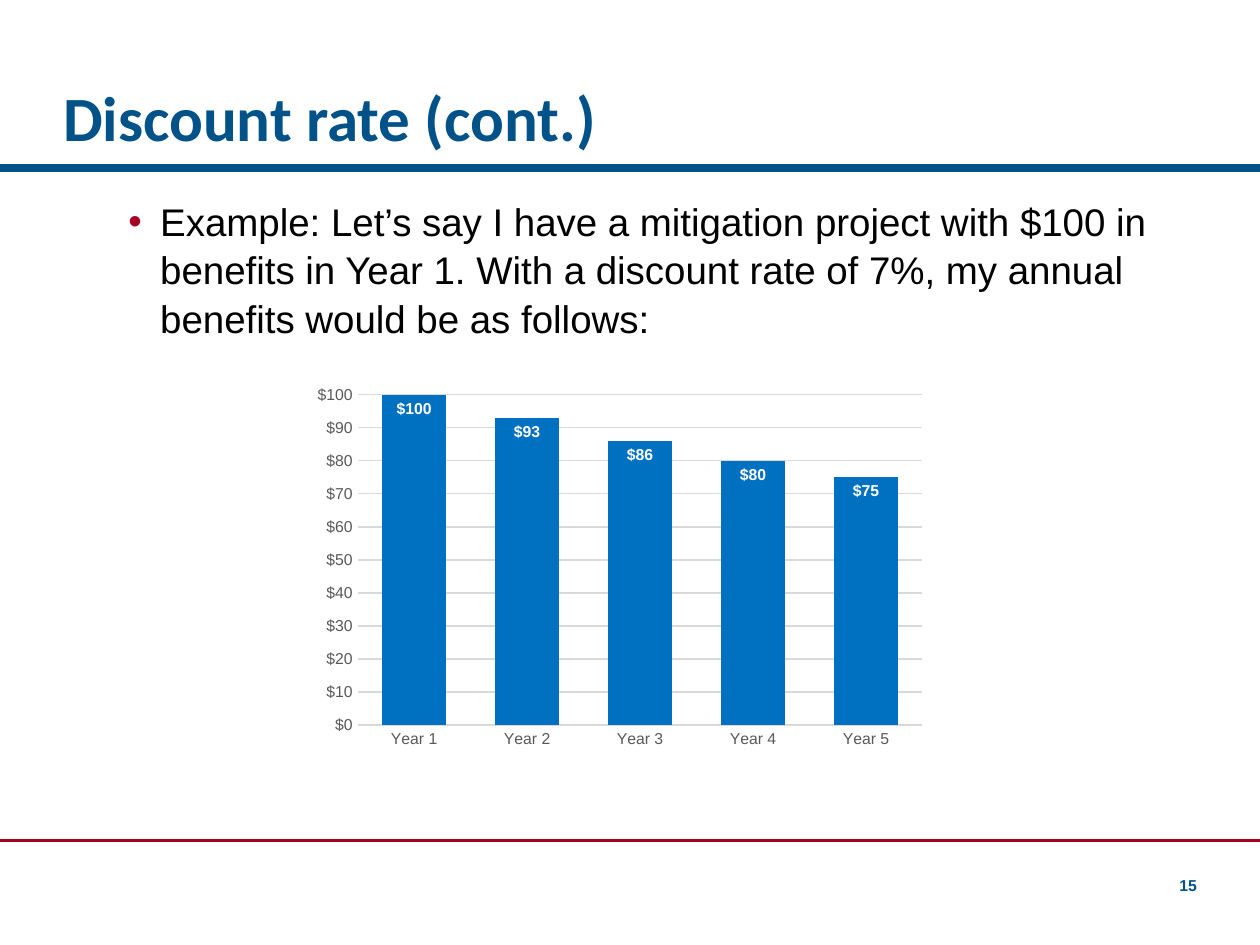
from lxml import etree
from pptx import Presentation
from pptx.chart.data import CategoryChartData
from pptx.dml.color import RGBColor
from pptx.enum.chart import XL_CHART_TYPE, XL_LABEL_POSITION, XL_TICK_MARK
from pptx.enum.shapes import MSO_CONNECTOR
from pptx.enum.text import MSO_ANCHOR, MSO_AUTO_SIZE, PP_ALIGN
from pptx.oxml.ns import qn
from pptx.util import Cm, Pt

NAVY = RGBColor(0x00, 0x52, 0x88)
CRIMSON = RGBColor(0xA5, 0x00, 0x21)
BLUE = RGBColor(0x00, 0x70, 0xC0)
BLACK = RGBColor(0x00, 0x00, 0x00)
WHITE = RGBColor(0xFF, 0xFF, 0xFF)
GREY = RGBColor(0x59, 0x59, 0x59)
PALE_GREY = RGBColor(0xD9, 0xD9, 0xD9)

SLIDE_WIDTH, SLIDE_HEIGHT = Cm(25.4), Cm(19.05)
DOLLARS = '"$"#,##0'
EXAMPLE = (
    "Example: Let’s say I have a mitigation project with $100 in benefits in "
    "Year 1. With a discount rate of 7%, my annual benefits would be as follows:"
)
BENEFITS = {"Year 1": 100, "Year 2": 93, "Year 3": 86, "Year 4": 80, "Year 5": 75}


def format_font(font, size, color, bold=False, name="Arial"):
    """Set the typeface, size, colour and weight of a font."""
    font.name, font.size, font.bold = name, Pt(size), bold
    font.color.rgb = color


def write_text(shape, text, *, size, color, bold=False, name="Arial",
               align=PP_ALIGN.LEFT, anchor=MSO_ANCHOR.TOP, spacing=1.0,
               side_margins=(Cm(0.25), Cm(0.25))):
    """Write one formatted paragraph into a shape and return it."""
    frame = shape.text_frame
    frame.word_wrap = True
    frame.auto_size = MSO_AUTO_SIZE.NONE
    frame.vertical_anchor = anchor
    frame.margin_left, frame.margin_right = side_margins
    frame.margin_top = frame.margin_bottom = Cm(0.13)
    paragraph = frame.paragraphs[0]
    paragraph.alignment = align
    paragraph.line_spacing = spacing
    run = paragraph.add_run()
    run.text = text
    format_font(run.font, size, color, bold, name)
    return paragraph


def place(shape, box):
    """Move a shape to a box of left, top, width and height."""
    shape.left, shape.top, shape.width, shape.height = box


def add_bullet(paragraph, color, indent):
    """Give a paragraph a coloured bullet with a hanging indent."""
    properties = paragraph._p.get_or_add_pPr()
    properties.set("marL", str(indent))
    properties.set("indent", str(-indent))
    bullet_color = etree.SubElement(properties, qn("a:buClr"))
    etree.SubElement(bullet_color, qn("a:srgbClr"), val=str(color))
    etree.SubElement(properties, qn("a:buFont"), typeface="Arial")
    etree.SubElement(properties, qn("a:buChar"), char="•")


def add_rule(slide, top, color, weight):
    """Draw a horizontal line across the slide."""
    rule = slide.shapes.add_connector(
        MSO_CONNECTOR.STRAIGHT, 0, top, SLIDE_WIDTH, top)
    rule.line.color.rgb = color
    rule.line.width = Pt(weight)
    etree.SubElement(rule._element.spPr, qn("a:effectLst"))


def add_heading(slide, box, text):
    """Fill the title placeholder and underline it."""
    left, top, width, height = box
    place(slide.shapes.title, box)
    write_text(slide.shapes.title, text, size=36, color=NAVY, bold=True,
               name="Calibri", anchor=MSO_ANCHOR.BOTTOM, spacing=0.9,
               side_margins=(0, Cm(0.25)))
    add_rule(slide, top + height + Cm(0.13), NAVY, 4.5)


def add_example(slide, box, text):
    """Fill the body placeholder with the bulleted example."""
    body = slide.placeholders[1]
    place(body, box)
    paragraph = write_text(body, text, size=22, color=BLACK, spacing=1.05)
    paragraph.space_before = Pt(0)
    add_bullet(paragraph, CRIMSON, Cm(0.64))


def add_benefits_chart(slide, box, benefits):
    """Add the column chart of annual benefits."""
    data = CategoryChartData(number_format=DOLLARS)
    data.categories = list(benefits)
    data.add_series("Series 1", list(benefits.values()))
    chart = slide.shapes.add_chart(
        XL_CHART_TYPE.COLUMN_CLUSTERED, *box, data).chart
    chart.has_legend = chart.has_title = False
    format_font(chart.font, 10, BLACK)

    years, dollars = chart.category_axis, chart.value_axis
    for axis in (years, dollars):
        axis.major_tick_mark = axis.minor_tick_mark = XL_TICK_MARK.NONE
        format_font(axis.tick_labels.font, 9, GREY)
    dollars.minimum_scale, dollars.maximum_scale, dollars.major_unit = 0, 100, 10
    dollars.tick_labels.number_format = DOLLARS
    dollars.tick_labels.number_format_is_linked = False
    dollars.format.line.fill.background()
    for line in (years.format.line, dollars.major_gridlines.format.line):
        line.color.rgb = PALE_GREY
        line.width = Pt(0.75)

    plot = chart.plots[0]
    plot.gap_width, plot.overlap, plot.vary_by_categories = 75, 40, False
    columns = plot.series[0]
    columns.format.fill.solid()
    columns.format.fill.fore_color.rgb = BLUE
    labels = columns.data_labels
    labels.show_value = True
    labels.position = XL_LABEL_POSITION.INSIDE_END
    labels.number_format, labels.number_format_is_linked = DOLLARS, False
    format_font(labels.font, 9, WHITE, bold=True)


def add_footer(slide, box, number):
    """Add the footer rule and the page number."""
    left, top, width, height = box
    add_rule(slide, top - Cm(0.59), CRIMSON, 1.5)
    write_text(slide.shapes.add_textbox(*box), number, size=9, color=NAVY,
               bold=True, align=PP_ALIGN.RIGHT, anchor=MSO_ANCHOR.BOTTOM,
               side_margins=(0, 0))


def main():
    """Build and save the discount rate slide."""
    deck = Presentation()
    deck.slide_width, deck.slide_height = SLIDE_WIDTH, SLIDE_HEIGHT
    slide = deck.slides.add_slide(deck.slide_layouts[1])
    add_heading(slide, (Cm(1.27), 0, Cm(22.86), Cm(3.25)), "Discount rate (cont.)")
    add_example(slide, (Cm(2.34), Cm(3.81), Cm(21.79), Cm(4.65)), EXAMPLE)
    add_benefits_chart(slide, (Cm(6.15), Cm(7.62), Cm(12.7), Cm(7.62)), BENEFITS)
    add_footer(slide, (Cm(23.29), Cm(17.53), Cm(0.84), Cm(0.64)), "15")
    deck.save("out.pptx")


if __name__ == "__main__":
    main()
